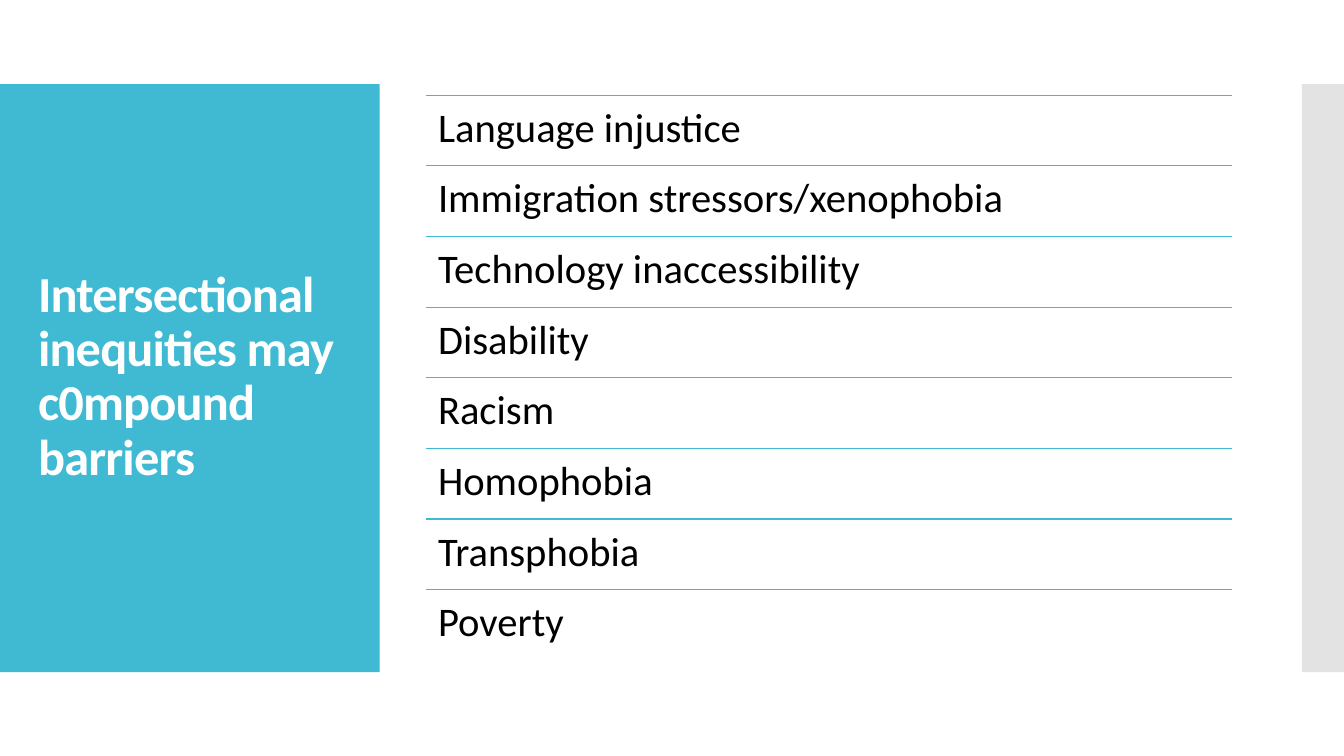
from lxml import etree
from pptx import Presentation
from pptx.dml.color import RGBColor
from pptx.enum.shapes import MSO_CONNECTOR, MSO_SHAPE
from pptx.enum.text import MSO_ANCHOR
from pptx.oxml.ns import qn
from pptx.util import Cm, Pt

RECT = MSO_SHAPE.RECTANGLE
STRAIGHT = MSO_CONNECTOR.STRAIGHT
TOP, MIDDLE = MSO_ANCHOR.TOP, MSO_ANCHOR.MIDDLE

COLORS = {"accent": "40BAD2", "edge": "C8C8C8", "text": "000000", "title": "FFFFFF"}
TITLE = "Intersectional inequities may c0mpound barriers"
BARRIERS = [
    "Language injustice",
    "Immigration stressors/xenophobia",
    "Technology inaccessibility",
    "Disability",
    "Racism",
    "Homophobia",
    "Transphobia",
    "Poverty",
]

SLIDE_W, SLIDE_H = 33.87, 19.05
BAND_TOP, BAND_H = 2.12, 14.82
PANEL_W, EDGE_W = 9.57, 1.06
LIST_LEFT, LIST_TOP, LIST_W, ROW_H = 10.74, 2.4, 20.32, 1.78


class SlideBuilder:
    """Draws elements on one slide in a shared style; lengths are in cm."""

    font = "Calibri"
    line_spacing = 0.9
    rule_width = 0.85

    def __init__(self, slide):
        self.slide = slide

    def color(self, name):
        return RGBColor.from_string(COLORS[name])

    def rect(self, x, y, w, h, color, alpha=None):
        """Add a borderless rectangle; alpha is its opacity in percent."""
        sp = self.slide.shapes.add_shape(RECT, Cm(x), Cm(y), Cm(w), Cm(h))
        sp.shadow.inherit = False
        sp.line.fill.background()
        sp.fill.solid()
        sp.fill.fore_color.rgb = self.color(color)
        if alpha is not None:
            clr = sp.fill._xPr.find(".//" + qn("a:srgbClr"))
            etree.SubElement(clr, qn("a:alpha")).set("val", str(alpha * 1000))

    def rule(self, x, y, w, color):
        """Add a horizontal line."""
        line = self.slide.shapes.add_connector(STRAIGHT, Cm(x), Cm(y), Cm(x + w), Cm(y))
        line.line.color.rgb = self.color(color)
        line.line.width = Pt(self.rule_width)
        etree.SubElement(line._element.spPr, qn("a:effectLst"))

    def text(self, x, y, w, h, text, size, color, bold=False,
             anchor=TOP, insets=(0.25, 0.13), tracking=None):
        """Add a text box; insets are (sides, top and bottom), tracking is in points."""
        tf = self.slide.shapes.add_textbox(Cm(x), Cm(y), Cm(w), Cm(h)).text_frame
        side, vertical = map(Cm, insets)
        frame_format = {
            "word_wrap": True, "vertical_anchor": anchor,
            "margin_left": side, "margin_right": side,
            "margin_top": vertical, "margin_bottom": vertical,
        }
        for name, value in frame_format.items():
            setattr(tf, name, value)
        p = tf.paragraphs[0]
        p.line_spacing = self.line_spacing
        r = p.add_run()
        r.text = text
        for name, value in {"name": self.font, "size": Pt(size), "bold": bold}.items():
            setattr(r.font, name, value)
        r.font.color.rgb = self.color(color)
        if tracking is not None:
            r._r.get_or_add_rPr().set("spc", str(round(tracking * 100)))


def main():
    prs = Presentation()
    prs.slide_width, prs.slide_height = Cm(SLIDE_W), Cm(SLIDE_H)
    s = SlideBuilder(prs.slides.add_slide(prs.slide_layouts[6]))

    s.rect(0, BAND_TOP, PANEL_W, BAND_H, "accent")
    s.rect(SLIDE_W - EDGE_W, BAND_TOP, EDGE_W, BAND_H, "edge", alpha=50)
    s.text(0.71, 3.12, 8.18, 12.78, TITLE, 36, "title",
           bold=True, anchor=MIDDLE, tracking=-0.6)

    for i, barrier in enumerate(BARRIERS):
        y = LIST_TOP + i * ROW_H
        s.rule(LIST_LEFT, y, LIST_W, "accent")
        s.text(LIST_LEFT, y, LIST_W, ROW_H, barrier, 29, "text", insets=(0.3, 0.3))

    prs.save("out.pptx")


if __name__ == "__main__":
    main()
